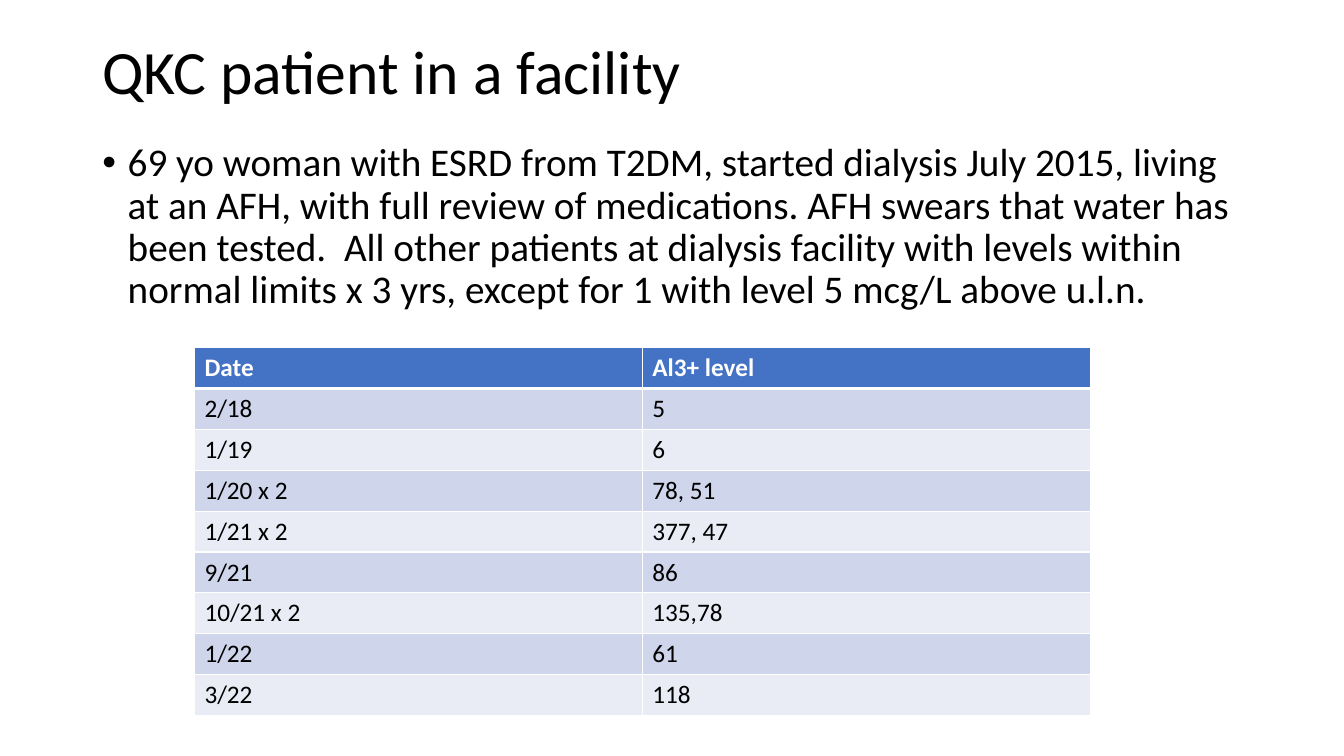
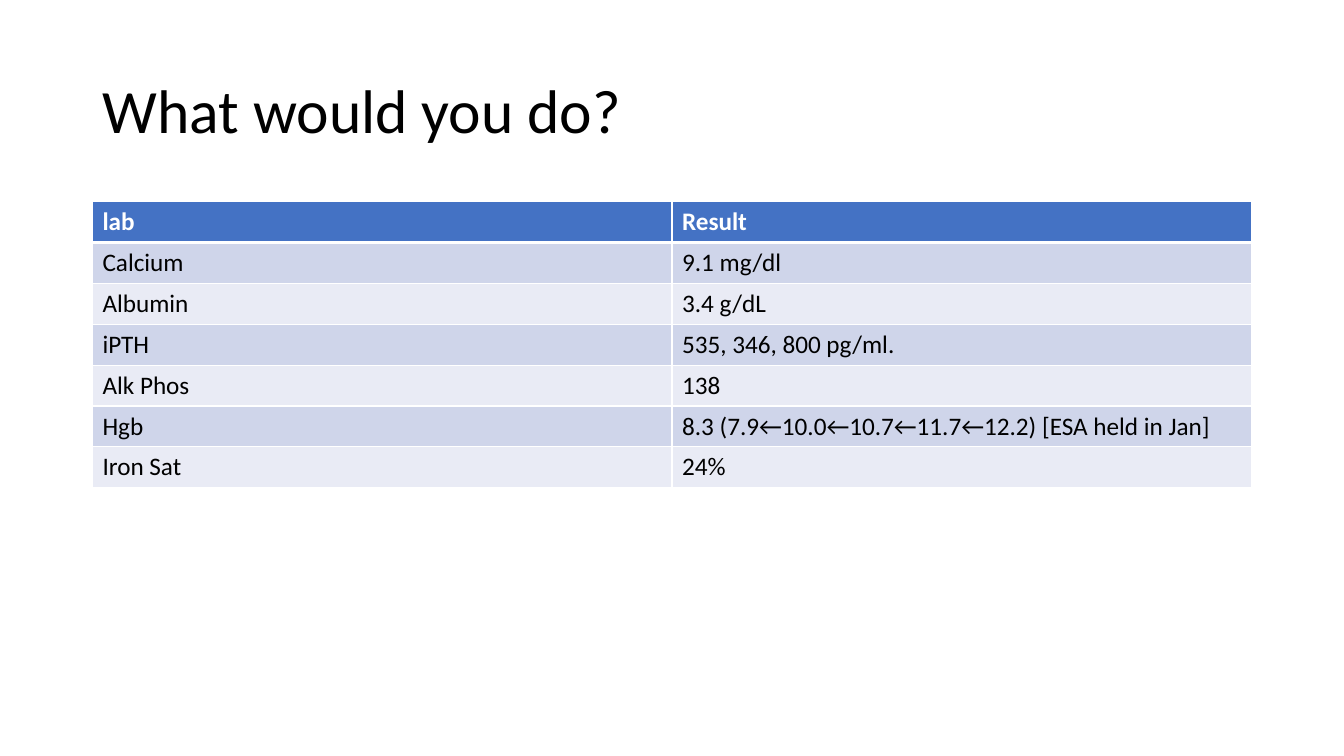
"""Build two clinical case slides with titled result tables."""
from dataclasses import dataclass

from lxml import etree
from pptx import Presentation
from pptx import util as u
from pptx.dml import color
from pptx.enum import text
from pptx.oxml import ns


@dataclass(frozen=True)
class Theme:
    font: str = "Calibri"
    ink: str = "000000"
    paper: str = "FFFFFF"
    header: str = "4472C4"
    bands: tuple[str, str] = ("CFD5EA", "E9EBF5")
    title_size: int = 44
    body_size: int = 28
    table_size: int = 18
    rule: int = 1
    header_rule: int = 3
    left: float = 2.33
    width: float = 29.21
    title_height: float = 3.68
    row_height: float = 1.03


@dataclass(frozen=True)
class TableSpec:
    left: float
    top: float
    col_width: float
    rows: tuple[tuple[str, str], ...]


@dataclass(frozen=True)
class SlideSpec:
    title: str
    title_top: float
    table: TableSpec
    bullet: str = ""


THEME = Theme()

SLIDES = (
    SlideSpec(
        title="QKC patient in a facility",
        title_top=0.03,
        bullet=(
            "69 yo woman with ESRD from T2DM, started dialysis July 2015, living at an AFH, "
            "with full review of medications. AFH swears that water has been tested.  "
            "All other patients at dialysis facility with levels within normal limits x 3 yrs, "
            "except for 1 with level 5 mcg/L above u.l.n."
        ),
        table=TableSpec(4.9, 8.76, 11.29, (
            ("Date", "Al3+ level"),
            ("2/18", "5"),
            ("1/19", "6"),
            ("1/20 x 2", "78, 51"),
            ("1/21 x 2", "377, 47"),
            ("9/21", "86"),
            ("10/21 x 2", "135,78"),
            ("1/22", "61"),
            ("3/22", "118"),
        )),
    ),
    SlideSpec(
        title="What would you do?",
        title_top=1.01,
        table=TableSpec(THEME.left, 5.08, THEME.width / 2, (
            ("lab", "Result"),
            ("Calcium", "9.1 mg/dl"),
            ("Albumin", "3.4 g/dL"),
            ("iPTH", "535, 346, 800 pg/ml."),
            ("Alk Phos", "138"),
            ("Hgb", "8.3 (7.9←10.0←10.7←11.7←12.2) [ESA held in Jan]"),
            ("Iron Sat", "24%"),
        )),
    ),
)


def style_text(tf, size: int, rgb: str, bold: bool = False) -> None:
    for p in tf.paragraphs:
        p.alignment = text.PP_ALIGN.LEFT
        for r in p.runs:
            r.font.name = THEME.font
            r.font.size = u.Pt(size)
            r.font.bold = bold
            r.font.color.rgb = color.RGBColor.from_string(rgb)


def add_title(s, spec: SlideSpec) -> None:
    sp = s.shapes.title
    sp.left, sp.top = u.Cm(THEME.left), u.Cm(spec.title_top)
    sp.width, sp.height = u.Cm(THEME.width), u.Cm(THEME.title_height)
    tf = sp.text_frame
    tf.text = spec.title
    tf.auto_size = text.MSO_AUTO_SIZE.NONE
    tf.vertical_anchor = text.MSO_ANCHOR.MIDDLE
    tf.paragraphs[0].line_spacing = 0.9
    style_text(tf, THEME.title_size, THEME.ink)


def add_bullet(s, wording: str) -> None:
    sp = s.shapes.add_textbox(u.Cm(THEME.left), u.Cm(3.48), u.Cm(THEME.width), u.Cm(4.67))
    tf = sp.text_frame
    tf.word_wrap = True
    tf.text = wording
    p = tf.paragraphs[0]
    p.line_spacing = 0.9
    p.space_before = u.Pt(10)
    indent = u.Cm(0.64)
    pPr = p._p.get_or_add_pPr()
    pPr.set("marL", str(indent))
    pPr.set("indent", str(-indent))
    etree.SubElement(pPr, ns.qn("a:buFont")).set("typeface", "Arial")
    etree.SubElement(pPr, ns.qn("a:buChar")).set("char", "•")
    style_text(tf, THEME.body_size, THEME.ink)


def set_borders(cell, top: int, bottom: int) -> None:
    tcPr = cell._tc.get_or_add_tcPr()
    widths = {"lnL": THEME.rule, "lnR": THEME.rule, "lnT": top, "lnB": bottom}
    for i, (side, width) in enumerate(widths.items()):
        ln = etree.Element(ns.qn(f"a:{side}"), w=str(u.Pt(width)))
        fill = etree.SubElement(ln, ns.qn("a:solidFill"))
        etree.SubElement(fill, ns.qn("a:srgbClr")).set("val", THEME.paper)
        tcPr.insert(i, ln)


def style_cell(cell, row: int) -> None:
    is_header = row == 0
    fill = THEME.header if is_header else THEME.bands[(row - 1) % 2]
    cell.fill.solid()
    cell.fill.fore_color.rgb = color.RGBColor.from_string(fill)
    style_text(cell.text_frame, THEME.table_size, THEME.paper if is_header else THEME.ink, is_header)
    set_borders(
        cell,
        top=THEME.header_rule if row == 1 else THEME.rule,
        bottom=THEME.header_rule if is_header else THEME.rule,
    )


def add_table(s, spec: TableSpec) -> None:
    n_rows, n_cols = len(spec.rows), len(spec.rows[0])
    table = s.shapes.add_table(
        n_rows, n_cols, u.Cm(spec.left), u.Cm(spec.top),
        u.Cm(spec.col_width * n_cols), u.Cm(THEME.row_height * n_rows),
    ).table
    for col in table.columns:
        col.width = u.Cm(spec.col_width)
    for i, values in enumerate(spec.rows):
        table.rows[i].height = u.Cm(THEME.row_height)
        for j, value in enumerate(values):
            cell = table.cell(i, j)
            cell.text_frame.text = value
            style_cell(cell, i)


def main() -> None:
    prs = Presentation()
    prs.slide_width, prs.slide_height = u.Cm(33.87), u.Cm(19.05)
    title_only = prs.slide_layouts.get_by_name("Title Only")
    for spec in SLIDES:
        s = prs.slides.add_slide(title_only)
        add_title(s, spec)
        if spec.bullet:
            add_bullet(s, spec.bullet)
        add_table(s, spec.table)
    prs.save("out.pptx")


if __name__ == "__main__":
    main()
